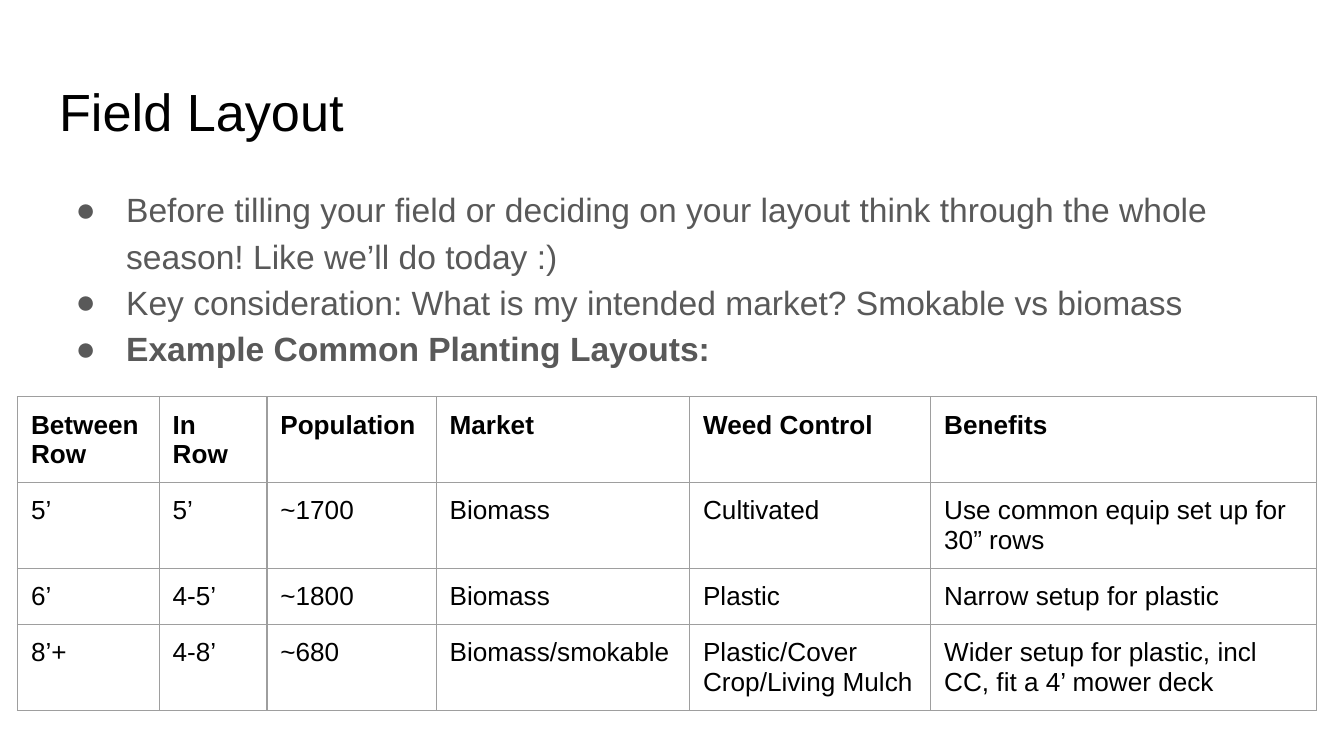
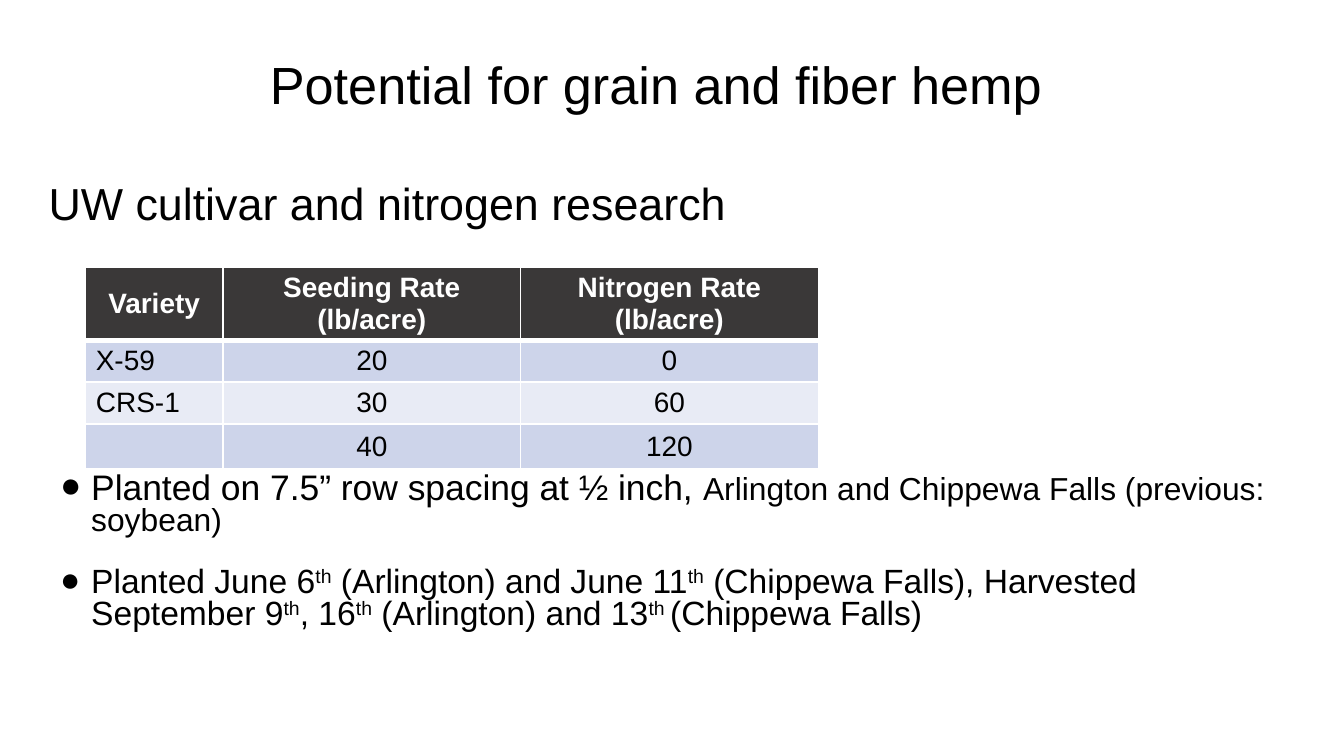
from lxml import etree
from pptx import Presentation
from pptx.dml.color import RGBColor
from pptx.enum.text import MSO_ANCHOR, MSO_AUTO_SIZE, PP_ALIGN
from pptx.oxml.ns import qn
from pptx.util import Pt

LEFT, MID = PP_ALIGN.LEFT, PP_ALIGN.CENTER
TOP, CENTER = MSO_ANCHOR.TOP, MSO_ANCHOR.MIDDLE
FIXED = MSO_AUTO_SIZE.NONE
FONT = "Arial"
BLACK = RGBColor(0x00, 0x00, 0x00)
WHITE = RGBColor(0xFF, 0xFF, 0xFF)
GREY = RGBColor(0x59, 0x59, 0x59)
RULE = RGBColor(0x9E, 0x9E, 0x9E)
DARK = RGBColor(0x3A, 0x38, 0x38)
BANDS = (RGBColor(0xCD, 0xD4, 0xEA), RGBColor(0xE8, 0xEB, 0xF5))
INSET = 7.2
SIDES = ("left", "top", "right", "bottom")

LAYOUTS = [
    ("Between Row", "In Row", "Population", "Market", "Weed Control", "Benefits"),
    ("5’", "5’", "~1700", "Biomass", "Cultivated",
     "Use common equip set up for 30” rows"),
    ("6’", "4-5’", "~1800", "Biomass", "Plastic", "Narrow setup for plastic"),
    ("8’+", "4-8’", "~680", "Biomass/smokable", "Plastic/Cover Crop/Living Mulch",
     "Wider setup for plastic, incl CC, fit a 4’ mower deck"),
]
RATES = [
    ("Variety", "Seeding Rate (lb/acre)", "Nitrogen Rate (lb/acre)"),
    ("X-59", "20", "0"),
    ("CRS-1", "30", "60"),
    ("", "40", "120"),
]
ADVICE = [
    [("Before tilling your field or deciding on your layout think through "
      "the whole season! Like we’ll do today :)", {})],
    [("Key consideration: What is my intended market? Smokable vs biomass", {})],
    [("Example Common Planting Layouts:", {"bold": True})],
]
RAISED = {"raised": True}
TRIALS = [
    [("Planted on 7.5” row spacing at ½ inch, ", {"size": 19}),
     ("Arlington and Chippewa Falls (previous: soybean)", {"size": 17})],
    [("Planted June 6", {}), ("th", RAISED), (" (Arlington) and June 11", {}),
     ("th", RAISED), (" (Chippewa Falls), Harvested", {}), (" ", {"size": 8}),
     ("September 9", {}), ("th", RAISED), (", 16", {}), ("th", RAISED),
     (" (Arlington) and 13", {}), ("th ", RAISED), ("(Chippewa Falls)", {})],
]


def apply(item, values):
    """Set each named value on an object."""
    for name, value in values.items():
        setattr(item, name, value)


def add_run(para, text, size, color, bold=False, raised=False):
    """Append one formatted run."""
    run = para.add_run()
    run.text = text
    apply(run.font, {"name": FONT, "size": Pt(size), "bold": bold})
    run.font.color.rgb = color
    if raised:
        run._r.get_or_add_rPr().set("baseline", "30000")


def set_frame(frame):
    """Give a text frame equal insets, wrapping and top anchoring."""
    apply(frame, {"word_wrap": True, "auto_size": FIXED, "vertical_anchor": TOP})
    apply(frame, {f"margin_{side}": Pt(INSET) for side in SIDES})


def add_title(slide, box, text, size):
    """Move the title placeholder into its box and fill it."""
    title = slide.shapes.title
    apply(title, dict(zip(("left", "top", "width", "height"), map(Pt, box))))
    set_frame(title.text_frame)
    para = title.text_frame.paragraphs[0]
    para.alignment = LEFT
    add_run(para, text, size, BLACK)


def add_box(slide, box):
    """Add a text box and return its frame."""
    frame = slide.shapes.add_textbox(*map(Pt, box)).text_frame
    set_frame(frame)
    return frame


def add_bullet(para, color, left, hang):
    """Give a paragraph a round bullet and a hanging indent."""
    props = para._p.get_or_add_pPr()
    props.set("marL", str(Pt(left)))
    props.set("indent", str(-Pt(hang)))
    tint = etree.SubElement(props, qn("a:buClr"))
    etree.SubElement(tint, qn("a:srgbClr"), val=str(color))
    etree.SubElement(props, qn("a:buFont"), typeface=FONT)
    etree.SubElement(props, qn("a:buChar"), char="●")


def add_list(slide, box, items, color, left, hang, pitch, gap=0):
    """Add a bulleted list in its box."""
    frame = add_box(slide, box)
    for num, runs in enumerate(items):
        para = frame.add_paragraph() if num else frame.paragraphs[0]
        add_bullet(para, color, left, hang)
        apply(para, {"line_spacing": pitch, "space_before": Pt(gap if num else 0)})
        for text, style in runs:
            add_run(para, text, **{"size": 18, "color": color, **style})


def set_edges(cell, color, widths):
    """Draw the left, right, top and bottom borders of a cell."""
    props = cell._tc.get_or_add_tcPr()
    for side, width in zip("LRTB", widths):
        line = etree.SubElement(props, qn(f"a:ln{side}"), w=str(Pt(width)))
        fill = etree.SubElement(line, qn("a:solidFill"))
        etree.SubElement(fill, qn("a:srgbClr"), val=str(color))


def add_grid(slide, spot, cols, rows, data, style):
    """Add a table whose cells are styled by a function of row and column."""
    size = (sum(cols), sum(rows))
    grid = slide.shapes.add_table(
        len(rows), len(cols), *map(Pt, (*spot, *size))).table
    apply(grid, {"first_row": False, "horz_banding": False})
    for col, width in zip(grid.columns, cols):
        col.width = Pt(width)
    for row, height in zip(grid.rows, rows):
        row.height = Pt(height)
    for r, line in enumerate(data):
        for c, text in enumerate(line):
            style(grid.cell(r, c), r, c, text)


def fill_cell(cell, text, size, color, bold, align):
    """Write the text of a cell, keeping its size when it is empty."""
    para = cell.text_frame.paragraphs[0]
    para.alignment = align
    if text:
        add_run(para, text, size, color, bold)
    else:
        etree.SubElement(para._p, qn("a:endParaRPr"), sz=str(size * 100))


def plain_cell(cell, r, c, text):
    """Style a cell of the ruled layout table."""
    apply(cell, {f"margin_{side}": Pt(INSET) for side in SIDES})
    set_edges(cell, RULE, [0.75] * 4)
    cell.fill.background()
    fill_cell(cell, text, 14, BLACK, r == 0, LEFT)


def band_cell(cell, r, c, text):
    """Style a cell of the banded rate table."""
    head, label = r == 0, r > 0 and c == 0
    apply(cell, dict(zip((f"margin_{side}" for side in SIDES),
                         map(Pt, (5.76, 2.88) * 2))))
    cell.vertical_anchor = TOP if label else CENTER
    set_edges(cell, WHITE, (1, 1, 3 if r == 1 else 1, 3 if head else 1))
    cell.fill.solid()
    cell.fill.fore_color.rgb = DARK if head else BANDS[(r - 1) % 2]
    fill_cell(cell, text, 15, WHITE if head else BLACK, head,
              LEFT if label else MID)


def field_slide(slide):
    """Build the field layout slide."""
    add_title(slide, (24.5, 35, 671, 45.4), "Field Layout", 28)
    add_list(slide, (24.5, 91, 652, 172), ADVICE, GREY, 36, 27, 1.15)
    add_grid(slide, (9.4, 212.6), (75.9, 57.7, 90.7, 135.8, 129.2, 206.6),
             [30.24] * 4, LAYOUTS, plain_cell)


def hemp_slide(slide):
    """Build the grain and fiber slide."""
    add_title(slide, (18.8, 87, 671, 45.4), "UW cultivar and nitrogen research", 24)
    add_list(slide, (24.5, 246.2, 671, 113.8), TRIALS, BLACK, 17.3, 16.6, 0.8, 16)
    add_grid(slide, (45.6, 143.2), (74, 159.2, 159.6), [33] + [18.7] * 3,
             RATES, band_cell)
    head = add_box(slide, (137.5, 20.9, 433.4, 37.4))
    add_run(head.paragraphs[0], "Potential for grain and fiber hemp", 28, BLACK)


def main():
    """Build and save the deck."""
    deck = Presentation()
    apply(deck, {"slide_width": Pt(720), "slide_height": Pt(405)})
    for build in (field_slide, hemp_slide):
        build(deck.slides.add_slide(deck.slide_layouts[5]))
    deck.save("out.pptx")


if __name__ == "__main__":
    main()
